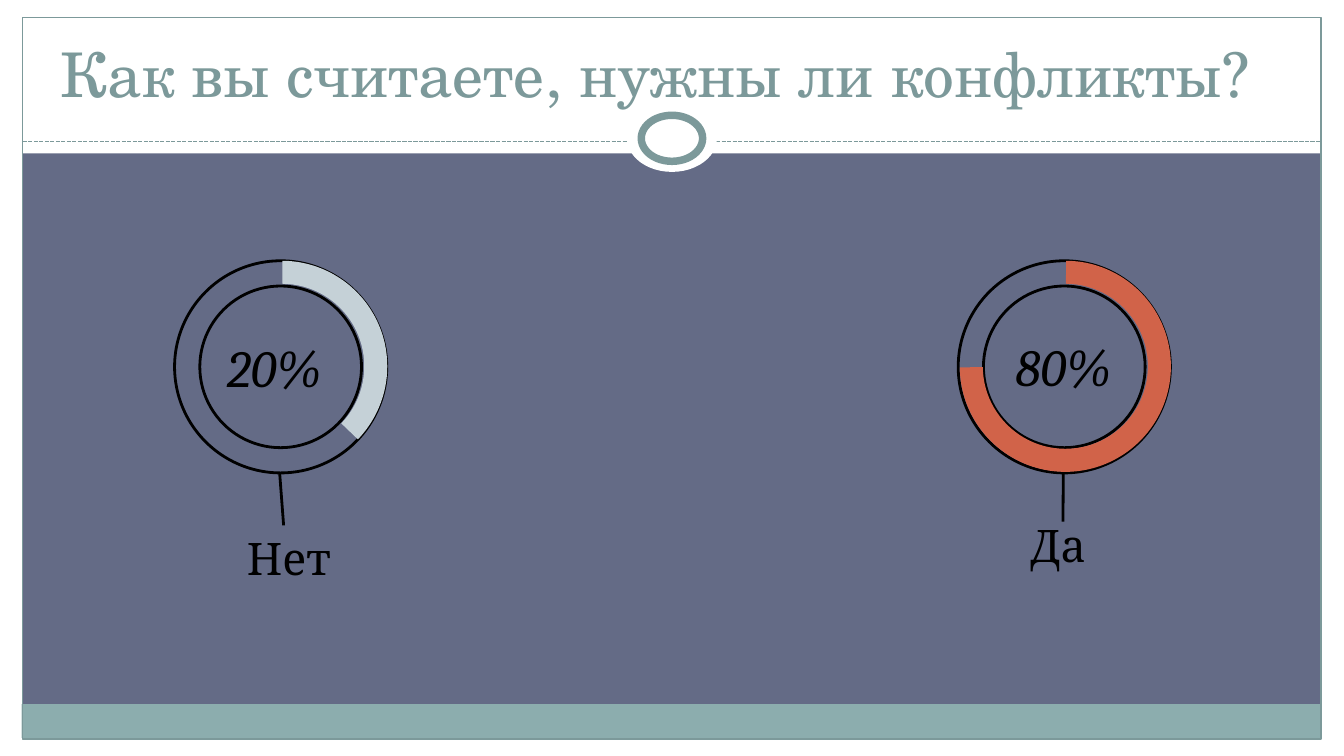
from dataclasses import dataclass

from lxml.etree import SubElement
from pptx import Presentation
from pptx.dml.color import RGBColor
from pptx.enum.dml import MSO_LINE
from pptx.enum.shapes import MSO_CONNECTOR, MSO_SHAPE
from pptx.enum.text import MSO_ANCHOR, MSO_AUTO_SIZE, PP_ALIGN
from pptx.oxml.ns import qn
from pptx.shapes.autoshape import Shape
from pptx.shapes.connector import Connector
from pptx.slide import Slide
from pptx.util import Cm, Pt

WIDTH, HEIGHT = 25.4, 14.29
MARGIN = 0.43
WHITE, BLACK, TEAL, SLATE = "FFFFFF", "000000", "7C999A", "646B86"
RING_TOP, RING_SIZE, ARC_SIZE = 4.93, 4.01, 3.99


@dataclass(frozen=True)
class Box:
    left: float
    top: float
    width: float
    height: float

    def lengths(self) -> list[Cm]:
        return [Cm(v) for v in (self.left, self.top, self.width, self.height)]


@dataclass(frozen=True)
class Gauge:
    ring_left: float
    color: str
    arc_start: float
    percent: str
    percent_box: Box
    percent_inset: float
    answer: str
    answer_box: Box
    stem_end: tuple[float, float]
    stem_joined: bool


GAUGES = [
    Gauge(18.11, "D16349", 0.35, "80%", Box(18.34, 6.12, 3.51, 1.63), 0.25,
          "Да ", Box(17.4, 9.86, 5.38, 1.19), (20.09, 9.86), True),
    Gauge(3.3, "C5D1D7", 81.73, "20%", Box(3.58, 6.15, 3.51, 1.63), 0.56,
          "Нет", Box(2.77, 10.11, 5.38, 1.19), (5.36, 9.93), False),
]


def rgb(color: str) -> RGBColor:
    return RGBColor.from_string(color)


def add_shape(slide: Slide, kind: MSO_SHAPE, box: Box, fill: str | None = None,
              line: str | None = None, weight: float = 0.75) -> Shape:
    shape = slide.shapes.add_shape(kind, *box.lengths())
    shape.shadow.inherit = False
    if fill:
        shape.fill.solid()
        shape.fill.fore_color.rgb = rgb(fill)
    else:
        shape.fill.background()
    if line:
        shape.line.color.rgb = rgb(line)
        shape.line.width = Pt(weight)
    else:
        shape.line.fill.background()
    return shape


def add_line(slide: Slide, start: tuple[float, float], end: tuple[float, float],
             color: str, weight: float) -> Connector:
    points = [Cm(value) for value in (*start, *end)]
    connector = slide.shapes.add_connector(MSO_CONNECTOR.STRAIGHT, *points)
    connector.line.color.rgb = rgb(color)
    connector.line.width = Pt(weight)
    SubElement(connector._element.spPr, qn("a:effectLst"))
    return connector


def format_text(shape: Shape, text: str, size: float, font: str, color: str,
                anchor: MSO_ANCHOR, italic: bool = False, right_inset: float = 0.25) -> None:
    frame = shape.text_frame
    frame.text = text
    frame.word_wrap = True
    frame.auto_size = MSO_AUTO_SIZE.NONE
    frame.vertical_anchor = anchor
    frame.margin_left = frame.margin_top = frame.margin_bottom = Cm(0.25)
    frame.margin_right = Cm(right_inset)
    paragraph = frame.paragraphs[0]
    paragraph.alignment = PP_ALIGN.CENTER
    run = paragraph.runs[0]
    run.font.size = Pt(size)
    run.font.name = font
    run.font.italic = italic
    run.font.color.rgb = rgb(color)


def add_label(slide: Slide, box: Box, text: str, size: float,
              italic: bool = False, right_inset: float = 0.25) -> Shape:
    label = slide.shapes.add_textbox(*box.lengths())
    format_text(label, text, size, "Cambria", BLACK, MSO_ANCHOR.BOTTOM, italic, right_inset)
    return label


def add_frame(slide: Slide) -> None:
    for box in (
        Box(0, 13.97, WIDTH, HEIGHT - 13.97),
        Box(0, 0, WIDTH, 2.9),
        Box(0, 0, MARGIN, HEIGHT),
        Box(WIDTH - MARGIN, 0, MARGIN, HEIGHT),
    ):
        add_shape(slide, MSO_SHAPE.RECTANGLE, box, WHITE)
    inner_width = WIDTH - 2 * MARGIN
    add_shape(slide, MSO_SHAPE.RECTANGLE, Box(0.41, 13.31, inner_width, 0.64), "8CADAE")
    add_shape(slide, MSO_SHAPE.RECTANGLE, Box(MARGIN, 0.33, inner_width, 13.64), line=TEAL)
    divider = add_line(slide, (MARGIN, 2.67), (WIDTH - MARGIN, 2.67), TEAL, 0.75)
    divider.line.dash_style = MSO_LINE.SQUARE_DOT
    add_shape(slide, MSO_SHAPE.OVAL, Box(11.85, 1.98, 1.7, 1.27), WHITE)
    add_shape(slide, MSO_SHAPE.OVAL, Box(12.12, 2.18, 1.16, 0.87), WHITE, TEAL, 4)


def add_title(slide: Slide) -> None:
    title = slide.shapes.title
    title.left, title.top, title.width, title.height = Box(0.58, 0.58, 23.62, 1.6).lengths()
    format_text(title, "Как вы считаете, нужны ли конфликты?", 33,
                "TeX Gyre Schola", TEAL, MSO_ANCHOR.MIDDLE)
    slide.shapes._spTree.append(title._element)


def add_gauge(slide: Slide, gauge: Gauge) -> None:
    ring_box = Box(gauge.ring_left, RING_TOP, RING_SIZE, RING_SIZE)
    ring = add_shape(slide, MSO_SHAPE.DONUT, ring_box, line=BLACK, weight=1.5)
    ring.adjustments[0] = 0.119
    arc_box = Box(gauge.ring_left + 0.03, RING_TOP, ARC_SIZE, ARC_SIZE)
    arc = add_shape(slide, MSO_SHAPE.BLOCK_ARC, arc_box, gauge.color)
    for index, value in enumerate((gauge.arc_start, 161.75, 0.109)):
        arc.adjustments[index] = value
    arc._element.spPr.find(qn("a:xfrm")).set("flipH", "1")
    answer = add_label(slide, gauge.answer_box, gauge.answer, 24)
    add_label(slide, gauge.percent_box, gauge.percent, 28, True, gauge.percent_inset)
    stem_start = (gauge.ring_left + RING_SIZE / 2 - 0.02, RING_TOP + RING_SIZE)
    stem = add_line(slide, stem_start, gauge.stem_end, BLACK, 1.5)
    if gauge.stem_joined:
        stem.end_connect(answer, 0)


def main() -> None:
    presentation = Presentation()
    presentation.slide_width, presentation.slide_height = Cm(WIDTH), Cm(HEIGHT)
    slide = presentation.slides.add_slide(presentation.slide_layouts[5])
    slide.background.fill.solid()
    slide.background.fill.fore_color.rgb = rgb(SLATE)
    add_frame(slide)
    add_title(slide)
    for gauge in GAUGES:
        add_gauge(slide, gauge)
    presentation.save("out.pptx")


if __name__ == "__main__":
    main()
